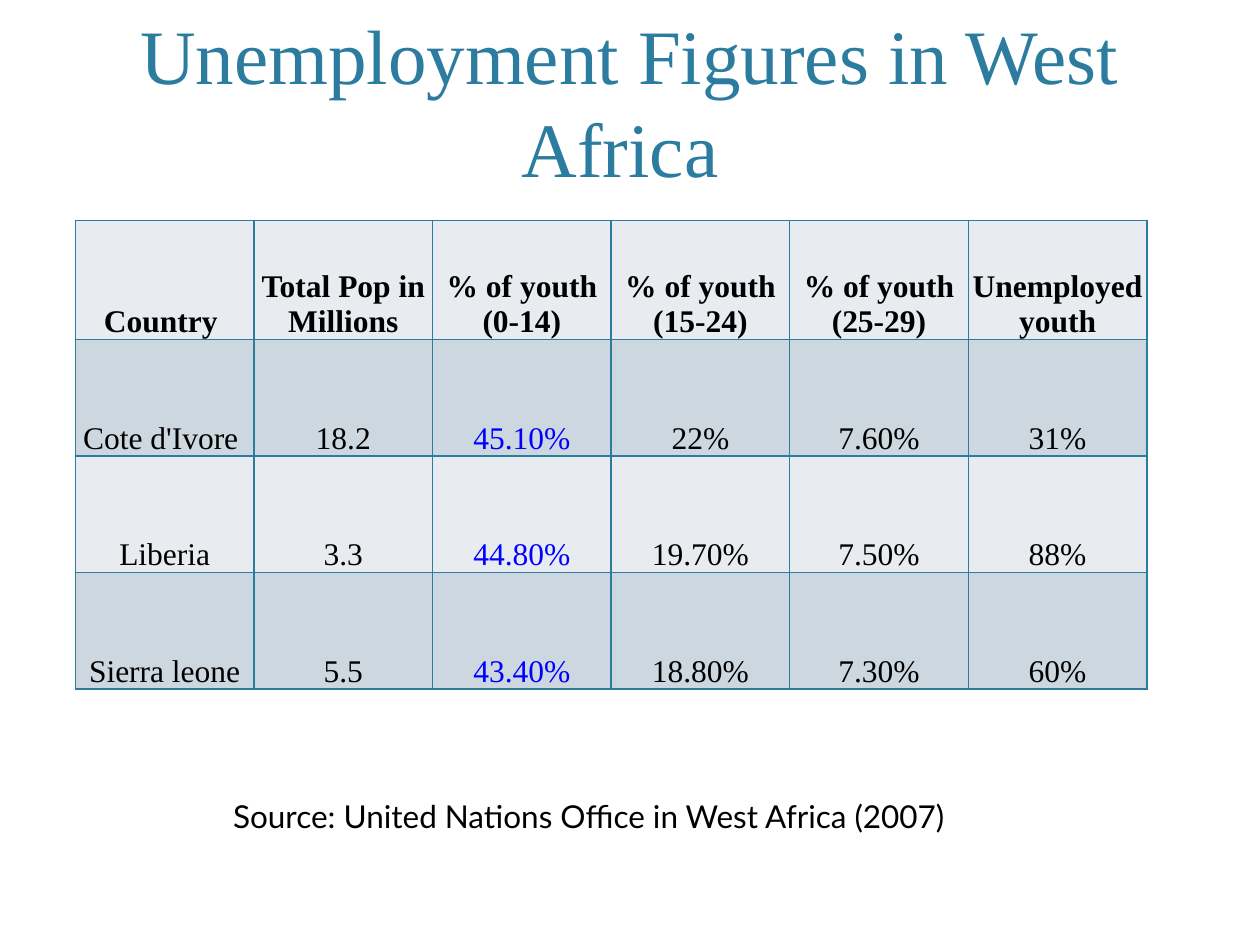
import pptx
import pptx.util
import pptx.dml.color
import pptx.enum.text
import pptx.oxml
import pptx.oxml.ns
from dataclasses import dataclass

Cm = pptx.util.Cm
Anchor = pptx.enum.text.MSO_ANCHOR
Align = pptx.enum.text.PP_ALIGN


@dataclass(frozen=True)
class Theme:
    teal: str = "2C7C9F"
    black: str = "000000"
    blue: str = "0000FF"
    light: str = "E8ECF0"
    dark: str = "CDD7DF"
    serif: str = "Times New Roman"
    sans: str = "Lato"
    head: int = 44
    body: int = 18


THEME = Theme()

ROWS = [
    ["Country ", "Total Pop in Millions", "% of youth (0-14)",
     "% of youth (15-24)", "% of youth (25-29)", "Unemployed youth"],
    ["Cote d'Ivore ", "18.2", "45.10%", "22%", "7.60%", "31%"],
    ["Liberia", "3.3", "44.80%", "19.70%", "7.50%", "88%"],
    ["Sierra leone", "5.5", "43.40%", "18.80%", "7.30%", "60%"],
]
BLUE_COL = 2


def rgb(code):
    return pptx.dml.color.RGBColor.from_string(code)


def write(frame, text, font, size, color, align, bold=False):
    frame.text = text
    para = frame.paragraphs[0]
    para.alignment = align
    for run in para.runs:
        run.font.name = font
        run.font.size = pptx.util.Pt(size)
        run.font.bold = bold
        run.font.color.rgb = rgb(color)


def add_title(slide, text):
    title = slide.shapes.title
    title.left, title.top = Cm(1.52), Cm(0.3)
    title.width, title.height = Cm(22.35), Cm(3.71)
    frame = title.text_frame
    write(frame, text, THEME.serif, THEME.head, THEME.teal, Align.CENTER)
    frame.word_wrap = True
    frame.auto_size = pptx.enum.text.MSO_AUTO_SIZE.NONE
    frame.vertical_anchor = Anchor.BOTTOM


def add_lines(cell):
    # Cell borders have no public method
    props = cell._tc.get_or_add_tcPr()
    space = pptx.oxml.ns.nsdecls("a")
    for side in "LRTB":
        props.append(pptx.oxml.parse_xml(
            f'<a:ln{side} {space} w="12700"><a:solidFill>'
            f'<a:srgbClr val="{THEME.teal}"/></a:solidFill></a:ln{side}>'))


def style_cell(cell, text, row, col):
    color = THEME.blue if row and col == BLUE_COL else THEME.black
    write(cell.text_frame, text, THEME.serif, THEME.body, color,
          Align.CENTER, bold=row == 0)
    cell.vertical_anchor = Anchor.BOTTOM
    cell.margin_left = cell.margin_right = cell.margin_top = Cm(0.03)
    cell.margin_bottom = 0
    add_lines(cell)
    cell.fill.solid()
    cell.fill.fore_color.rgb = rgb(THEME.dark if row % 2 else THEME.light)


def add_grid(slide, rows):
    count = len(rows[0])
    table = slide.shapes.add_table(
        len(rows), count, Cm(1.52), Cm(4.44), Cm(3.6 * count), Cm(9.45)).table
    for col in table.columns:
        col.width = Cm(3.6)
    for r, row in enumerate(rows):
        table.rows[r].height = Cm(2.35 if r else 2.4)
        for c, text in enumerate(row):
            style_cell(table.cell(r, c), text, r, c)


def add_note(slide, text):
    box = slide.shapes.add_textbox(Cm(4.45), Cm(15.95), Cm(16.15), Cm(1.03))
    box.text_frame.word_wrap = True
    write(box.text_frame, text, THEME.sans, THEME.body, THEME.black,
          Align.LEFT)


def main():
    deck = pptx.Presentation()
    deck.slide_width, deck.slide_height = Cm(25.4), Cm(19.05)
    slide = deck.slides.add_slide(deck.slide_layouts[5])

    # Heading
    add_title(slide, "Unemployment Figures in West Africa ")
    # Figures by country
    add_grid(slide, ROWS)
    # Source line
    add_note(slide, "Source: United Nations Office in West Africa (2007)")

    deck.save("out.pptx")


if __name__ == "__main__":
    main()
